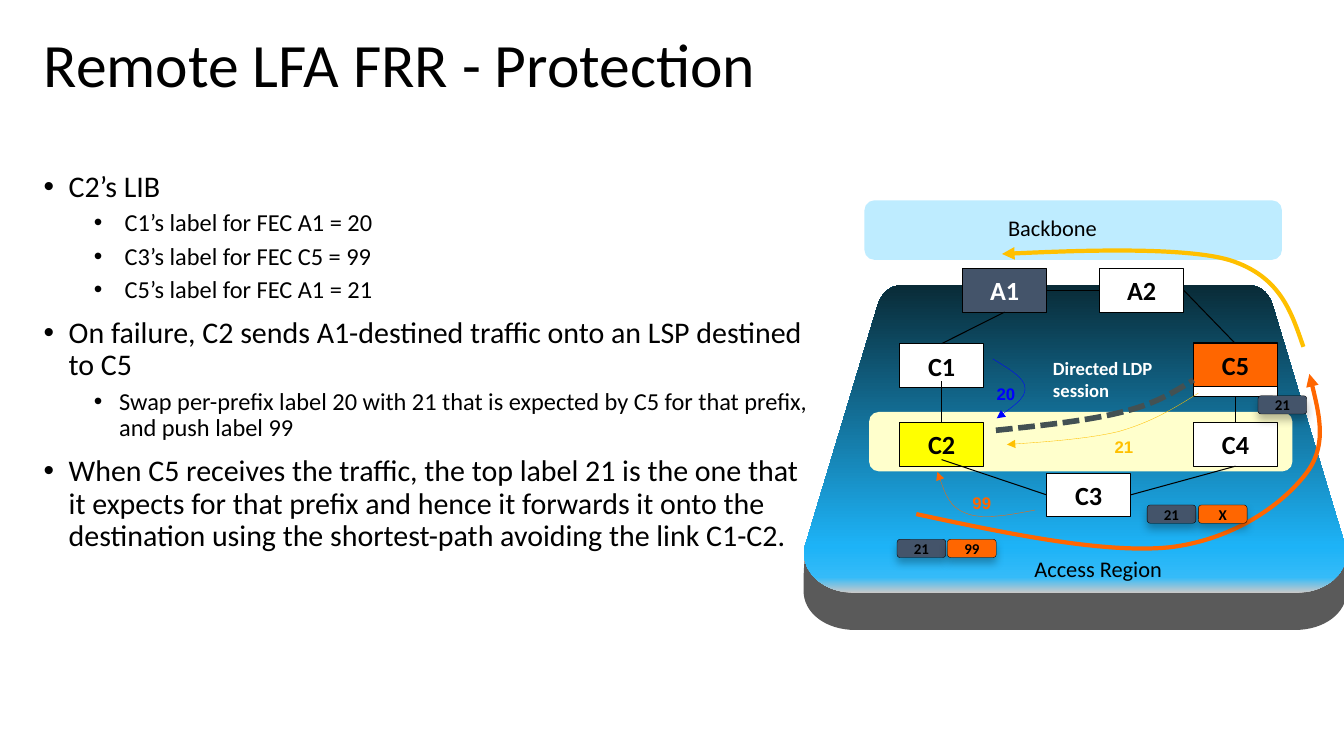
from lxml import etree
from pptx import Presentation
from pptx.dml.color import RGBColor
from pptx.enum.dml import MSO_LINE
from pptx.enum.shapes import MSO_CONNECTOR, MSO_SHAPE
from pptx.enum.text import MSO_ANCHOR, PP_ALIGN
from pptx.oxml.ns import qn
from pptx.util import Pt

RECT, ROUND = MSO_SHAPE.RECTANGLE, MSO_SHAPE.ROUNDED_RECTANGLE
STRAIGHT, DASH = MSO_CONNECTOR.STRAIGHT, MSO_LINE.SQUARE_DOT
LEFT, CENTER = PP_ALIGN.LEFT, PP_ALIGN.CENTER
TOP, MIDDLE = MSO_ANCHOR.TOP, MSO_ANCHOR.MIDDLE
UP, LEFT_SIDE, DOWN, RIGHT_SIDE = range(4)
BLACK, WHITE, SLATE, ORANGE, AMBER, BLUE = "000000", "FFFFFF", "44546A", "FF6600", "FFC000", "0000FF"

# Text, level, left margin, hanging indent
BULLETS = [
    ("C2’s LIB", 0, 18, 18),
    ("C1’s label for FEC A1 = 20", 1, 58, 22),
    ("C3’s label for FEC C5 = 99", 1, 58, 22),
    ("C5’s label for FEC A1 = 21", 1, 58, 22),
    ("On failure, C2 sends A1-destined traffic onto an LSP destined to C5", 0, 18, 18),
    ("Swap per-prefix label 20 with 21 that is expected by C5 for that prefix, and push label 99", 1, 54, 18),
    ("When C5 receives the traffic, the top label 21 is the one that it expects for that prefix and hence "
     "it forwards it onto the destination using the shortest-path avoiding the link C1-C2.", 0, 18, 18),
]

# Diagram places are relative to the diagram's top left corner
NODE_W, NODE_H = 60, 31.2
NODES = {
    "A1": (117.6, 51.7, SLATE, WHITE), "A2": (215.5, 51.7, WHITE, BLACK),
    "C1": (72.6, 105.5, WHITE, BLACK), "C2": (72.6, 161.8, "FFFF00", BLACK),
    "C3": (177.6, 197.9, WHITE, BLACK), "C4": (282.5, 161.8, WHITE, BLACK),
    "C5": (282.5, 105, ORANGE, BLACK),
}
# Each end is a node and side, or a free point
LINKS = [
    (("A1", DOWN), ("C1", UP)), ((102.6, 188.3), ("C3", LEFT_SIDE)),
    (("C3", RIGHT_SIDE), ("C4", DOWN)), (("C4", UP), ("backing", DOWN)),
    (("backing", UP), ("A2", RIGHT_SIDE)), (("A1", RIGHT_SIDE), ("A2", LEFT_SIDE)),
    (("C2", UP), (102.6, 132.2)),
]
# Left halves, each a chain of cubic curves
PLATFORM_EDGE = [(76, 63.5), (64, 63.5), (58.5, 71), (56, 81), (56, 81), (5, 250), (5, 250),
                 (1, 268), (18, 283.5), (41, 283.5)]
BASE_EDGE = [(6, 252), (4, 262), (4, 272), (4, 282), (4, 298), (20, 310), (41, 310)]
PLATFORM_STOPS = [(0, "C9C9C9"), (5, "35BBF8"), (15, "1DB3F7"), (100, "092B37")]
PLATFORM_AXIS = 198
SESSION = [(141.4, 167.4), (175.9, 163.8), (209.8, 160.2), (233.5, 153.8),
           (256.6, 148), (269.5, 139.4), (282.5, 131.4)]
ARROWS = [
    (AMBER, 0.25, [(286, 140.8), (268.8, 151.6), (252.2, 161.7), (229.2, 168.2),
                   (206.2, 173.9), (149.3, 177.5), (149.3, 177.5)]),
    (BLUE, 0.25, [(139.2, 116.3), (150.7, 123.5), (162.2, 130), (162.2, 137.2),
                  (163, 144.4), (142, 158.8), (142, 158.8)]),
    (ORANGE, 0.25, [(169.4, 224.3), (150.7, 227.9), (131.3, 231.5), (119.8, 226.5),
                    (108.2, 222.2), (103.9, 209.2), (99.6, 197)]),
    (ORANGE, 3, [(84.5, 227.2), (151.4, 241.6), (218.4, 255.3), (264.5, 251), (310.6, 245.9),
                 (345.1, 220.7), (361.7, 199.8), (378.2, 179.7), (371.8, 153), (365.3, 127.1)]),
    (AMBER, 3, [(361, 107.7), (352.3, 82.5), (344.4, 57.3), (308.4, 45.8),
                (272.4, 35), (145.7, 41.4), (145.7, 41.4)]),
]
LABELS = [("21", AMBER, 215.5, 167.4), ("20", BLUE, 131.3, 130), ("99", ORANGE, 114, 207.8)]
TAGS = [("21", SLATE, 70.8, 245.2), ("99", ORANGE, 106.8, 245.2), ("21", SLATE, 249.4, 220.7),
        ("X", ORANGE, 286, 220.7), ("21", SLATE, 328.6, 142.7)]


def rgb(color):
    return RGBColor.from_string(color)


def sub(parent, tag, **attrs):
    return etree.SubElement(parent, qn(tag), {k: str(v) for k, v in attrs.items()})


def style(sp, fill=None, line=None, width=0.75):
    sp.shadow.inherit = False
    if fill:
        sp.fill.solid()
        sp.fill.fore_color.rgb = rgb(fill)
    else:
        sp.fill.background()
    if line:
        sp.line.color.rgb = rgb(line)
        sp.line.width = Pt(width)
    else:
        sp.line.fill.background()


def write(sp, lines, size, color, font="Calibri", bold=False, align=LEFT, anchor=TOP, margins=(8.64, 4.32)):
    tf = sp.text_frame
    tf.word_wrap, tf.vertical_anchor = True, anchor
    tf.margin_left = tf.margin_right = Pt(margins[0])
    tf.margin_top = tf.margin_bottom = Pt(margins[1])
    tf.text = lines
    for p in tf.paragraphs:
        p.alignment = align
        p.font.size, p.font.name, p.font.bold = Pt(size), font, bold
        p.font.color.rgb = rgb(color)


def add_box(s, kind, x, y, w, h, fill, line=None, width=0.75):
    sp = s.shapes.add_shape(kind, Pt(x), Pt(y), Pt(w), Pt(h))
    style(sp, fill, line, width)
    return sp


def add_text(s, text, x, y, w, h, size, color, **options):
    write(s.shapes.add_textbox(Pt(x), Pt(y), Pt(w), Pt(h)), text, size, color, **options)


def add_curve(s, x, y, points, close=False):
    """Draw a chain of cubic curves: a start, then two controls and an end for each."""
    points = [(Pt(x + px), Pt(y + py)) for px, py in points]
    builder = s.shapes.build_freeform(*points[0])
    builder.add_line_segments(points[1:], close=close)
    sp = builder.convert_to_shape()
    lines = list(sp._element.spPr.iter(qn("a:lnTo")))
    for i in range(0, len(lines), 3):
        curve = etree.Element(qn("a:cubicBezTo"))
        lines[i].addprevious(curve)
        for line in lines[i:i + 3]:
            curve.append(line[0])
            line.getparent().remove(line)
    return sp


def add_platform(s, x, y):
    for edge, fill in ((BASE_EDGE, "5A5A5A"), (PLATFORM_EDGE, "1DB3F7")):
        mirrored = [(2 * PLATFORM_AXIS - px, py) for px, py in reversed(edge)]
        sp = add_curve(s, x, y, edge + [edge[-1], mirrored[0]] + mirrored, close=True)
        style(sp, fill)
    sp.fill.gradient()
    sp.fill.gradient_angle = 90
    stops = sp._element.spPr.find(".//" + qn("a:gsLst"))
    for old in list(stops):
        stops.remove(old)
    for pos, color in PLATFORM_STOPS:
        sub(sub(stops, "a:gs", pos=pos * 1000), "a:srgbClr", val=color)


def add_link(s, x, y, nodes, start, end):
    c = s.shapes.add_connector(STRAIGHT, *(Pt(v) for v in (x, y, x, y)))
    if start[0] in nodes:
        c.begin_connect(nodes[start[0]], start[1])
    else:
        c.begin_x, c.begin_y = Pt(x + start[0]), Pt(y + start[1])
    if end[0] in nodes:
        c.end_connect(nodes[end[0]], end[1])
    else:
        c.end_x, c.end_y = Pt(x + end[0]), Pt(y + end[1])
    c.line.color.rgb, c.line.width = rgb(BLACK), Pt(0.75)
    sub(c._element.spPr, "a:effectLst")


def add_tag(s, text, fill, x, y):
    sp = add_box(s, ROUND, x, y, 34.8, 13, fill, BLACK, 0.25)
    write(sp, text, 10.7, BLACK, bold=True, align=CENTER, anchor=MIDDLE, margins=(0, 0))
    effects = sp._element.spPr.find(qn("a:effectLst"))
    shadow = sub(effects, "a:outerShdw", blurRad=Pt(6), dist=Pt(4), dir=5400000, rotWithShape=0)
    sub(sub(shadow, "a:srgbClr", val=BLACK), "a:alpha", val=27000)


def add_diagram(s, x, y):
    add_platform(s, x, y)
    add_box(s, ROUND, x + 50.8, y + 154.2, 302.4, 42.5, "FFFFCC")
    add_box(s, ROUND, x + 47.5, y + 3.1, 298.2, 42.5, "BEECFF")
    nodes = {"backing": add_box(s, RECT, x + 282.5, y + 105.5, NODE_W, 37.5, WHITE, BLACK)}
    for name, (nx, ny, fill, color) in NODES.items():
        nodes[name] = add_box(s, RECT, x + nx, y + ny, NODE_W, NODE_H, fill, BLACK)
        write(nodes[name], name, 18.7, color, bold=True, align=CENTER, anchor=MIDDLE)
    for start, end in LINKS:
        add_link(s, x, y, nodes, start, end)
    add_text(s, "Backbone", x + 141.4, y + 8.3, 112, 28, 16, BLACK)
    add_text(s, "Access Region", x + 126.6, y + 252.4, 175.7, 28, 16, BLACK, align=CENTER)
    session = add_curve(s, x, y, SESSION)
    style(session, line="435153", width=4)
    session.line.dash_style = DASH
    add_text(s, "Directed LDP\nsession", x + 173.5, y + 110.6, 104.4, 41, 13.3, WHITE, bold=True)
    for color, width, points in ARROWS:
        sp = add_curve(s, x, y, points)
        style(sp, line=color, width=width)
        sub(sp._element.spPr.find(qn("a:ln")), "a:tailEnd", type="triangle")
    for text, color, lx, ly in LABELS:
        add_text(s, text, x + lx, y + ly, 34.6, 23, 12, color, font="Arial", bold=True, align=CENTER)
    for text, fill, tx, ty in TAGS:
        add_tag(s, text, fill, x + tx, y + ty)


def add_title(s, x, y, w, h):
    sp = s.shapes.title
    sp.left, sp.top, sp.width, sp.height = Pt(x), Pt(y), Pt(w), Pt(h)
    write(sp, "Remote LFA FRR - Protection", 44, BLACK, anchor=MIDDLE, margins=(7.2, 3.6))


def add_bullets(s, x, y, w, h):
    sp = s.shapes.add_textbox(Pt(x), Pt(y), Pt(w), Pt(h))
    write(sp, "\n".join(b[0] for b in BULLETS), 21.4, BLACK, margins=(7.2, 3.6))
    for p, (_, level, margin, hang) in zip(sp.text_frame.paragraphs, BULLETS):
        p.level, p.line_spacing = level, 0.9
        p.space_before = Pt(5 if level else 10)
        p.font.size = Pt(17.4 if level else 21.4)
        pPr = p._p.get_or_add_pPr()
        pPr.set("marL", str(Pt(margin)))
        pPr.set("indent", str(-Pt(hang)))
        bullet_font = etree.Element(qn("a:buFont"), typeface="Arial")
        bullet = etree.Element(qn("a:buChar"), char="•")
        pPr.find(qn("a:defRPr")).addprevious(bullet_font)
        bullet_font.addnext(bullet)


def main():
    prs = Presentation()
    prs.slide_width, prs.slide_height = Pt(960), Pt(540)
    s = prs.slides.add_slide(prs.slide_layouts[5])
    add_title(s, 24, 12, 912, 66)
    add_bullets(s, 24, 119, 564, 344)
    add_diagram(s, 570, 140)
    prs.save("out.pptx")


if __name__ == "__main__":
    main()
